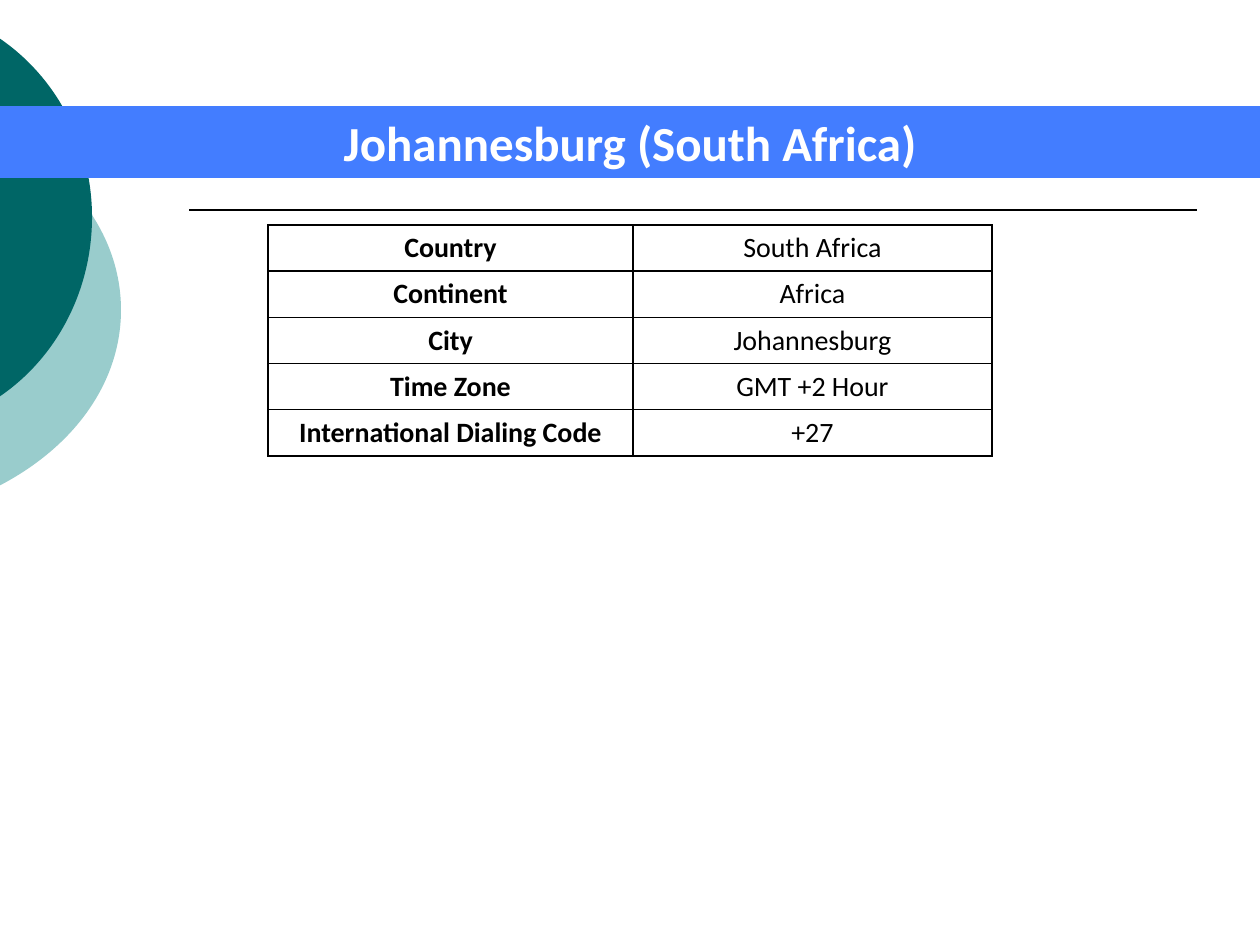
from lxml import etree
from pptx import Presentation
from pptx.dml.color import RGBColor
from pptx.enum.shapes import MSO_CONNECTOR, MSO_SHAPE
from pptx.enum.text import MSO_ANCHOR, PP_ALIGN
from pptx.oxml.ns import qn
from pptx.util import Emu, Pt

CENTER, MIDDLE = PP_ALIGN.CENTER, MSO_ANCHOR.MIDDLE
RECT, STRAIGHT = MSO_SHAPE.RECTANGLE, MSO_CONNECTOR.STRAIGHT

# Content
TITLE = "Johannesburg (South Africa)"
FACTS = [
    ("Country", "South Africa"),
    ("Continent", "Africa"),
    ("City", "Johannesburg"),
    ("Time Zone", "GMT +2 Hour"),
    ("International Dialing Code", "+27"),
]
COLORS = {"pale": "99CCCC", "teal": "006666", "blue": "437DFF",
          "black": "000000", "white": "FFFFFF"}

# Layout in px, 126 to the inch
SCALE = 914400 / 126
WIDTH, HEIGHT = 1260, 945
BANNER = (0, 106, WIDTH, 72)
RULE = (189, 210, 1197, 210)
TABLE_LEFT, TABLE_TOP, TABLE_HEIGHT = 268, 225, 231
COL_WIDTHS, ROW_HEIGHT = (365, 359), 34  # rows grow to fit their text
CELL_MARGIN = 6
# Each crescent: colour, frame, start point, then two Bezier curves downwards
CRESCENTS = [
    ("pale", (-446, 94, 567, 431), (-1, 134),
     [((76, 174), (121, 239), (121, 310)), ((121, 381), (76, 446), (-1, 486))]),
    ("teal", (-334, 0, 426, 435), (-1, 38),
     [((58, 78), (92, 146), (92, 217)), ((92, 289), (58, 357), (-1, 397))]),
]


def px(n):
    return Emu(round(n * SCALE))


def rgb(name):
    return RGBColor.from_string(COLORS[name])


def write(tf, text, size=16, color="black", bold=False):
    p = tf.paragraphs[0]
    p.alignment = CENTER
    r = p.add_run()
    r.text = text
    r.font.name, r.font.size, r.font.bold = "Calibri", Pt(size), bold
    r.font.color.rgb = rgb(color)


def paint(sp, color):
    sp.shadow.inherit = False
    sp.fill.solid()
    sp.fill.fore_color.rgb = rgb(color)
    sp.line.fill.background()


def add_crescent(frame, start, curves):
    left, top, width, height = frame
    fb = s.shapes.build_freeform(left, top, scale=SCALE)
    fb.add_line_segments([(left + width, top), (left + width, top + height)])
    sp = fb.convert_to_shape()
    # Curved outline, in px from the frame's corner
    outline = next(sp._element.iter(qn("a:path")))
    for child in list(outline):
        outline.remove(child)
    outline.set("w", str(width))
    outline.set("h", str(height))
    for tag, points in [("a:moveTo", [start])] + [("a:cubicBezTo", c) for c in curves]:
        segment = etree.SubElement(outline, qn(tag))
        for x, y in points:
            etree.SubElement(segment, qn("a:pt"), x=str(x - left), y=str(y - top))
    etree.SubElement(outline, qn("a:close"))
    return sp


def add_borders(cell):
    tcPr = cell._tc.get_or_add_tcPr()
    for side in ("lnL", "lnR", "lnT", "lnB"):
        ln = etree.SubElement(tcPr, qn("a:" + side), w=str(Pt(1)))
        fill = etree.SubElement(ln, qn("a:solidFill"))
        etree.SubElement(fill, qn("a:srgbClr"), val=COLORS["black"])


prs = Presentation()
prs.slide_width, prs.slide_height = px(WIDTH), px(HEIGHT)
s = prs.slides.add_slide(prs.slide_layouts[6])

# Crescents at the left edge
for color, *outline in CRESCENTS:
    paint(add_crescent(*outline), color)

# Rule under the title
rule = s.shapes.add_connector(STRAIGHT, *map(px, RULE))
rule.line.color.rgb, rule.line.width = rgb("black"), Pt(1)
etree.SubElement(rule._element.spPr, qn("a:effectLst"))

# Title banner
banner = s.shapes.add_shape(RECT, *map(px, BANNER))
paint(banner, "blue")
banner.text_frame.word_wrap = True
banner.text_frame.vertical_anchor = MIDDLE
write(banner.text_frame, TITLE, size=28, color="white", bold=True)

# Fact table
frame = s.shapes.add_table(len(FACTS), len(COL_WIDTHS), px(TABLE_LEFT), px(TABLE_TOP),
                           px(sum(COL_WIDTHS)), px(TABLE_HEIGHT))
table = frame.table
table.first_row = table.horz_banding = False
for col, width in zip(table.columns, COL_WIDTHS):
    col.width = px(width)
for row, fact in zip(table.rows, FACTS):
    row.height = px(ROW_HEIGHT)
    for i, (cell, text) in enumerate(zip(row.cells, fact)):
        add_borders(cell)
        cell.fill.background()
        cell.vertical_anchor = MIDDLE
        cell.margin_top = cell.margin_bottom = px(CELL_MARGIN)
        write(cell.text_frame, text, bold=i == 0)
frame.height = px(TABLE_HEIGHT)

prs.save("out.pptx")
